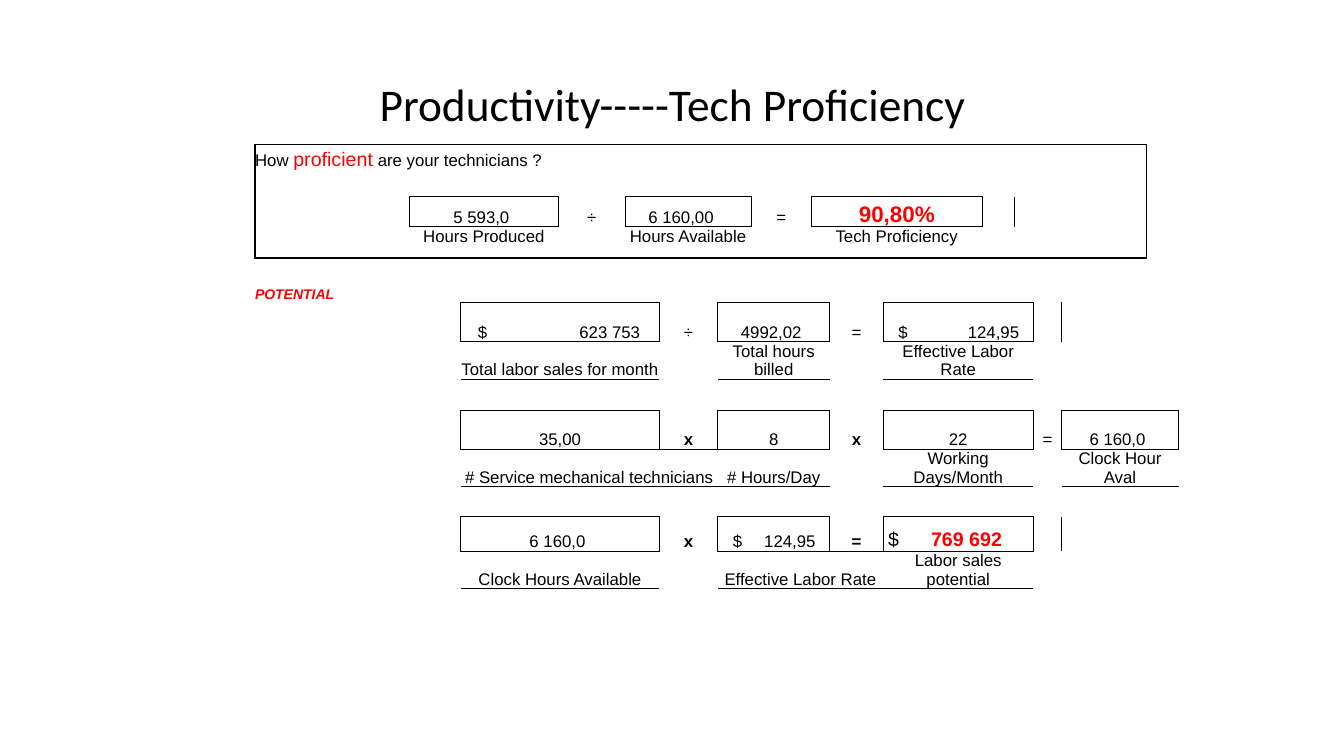
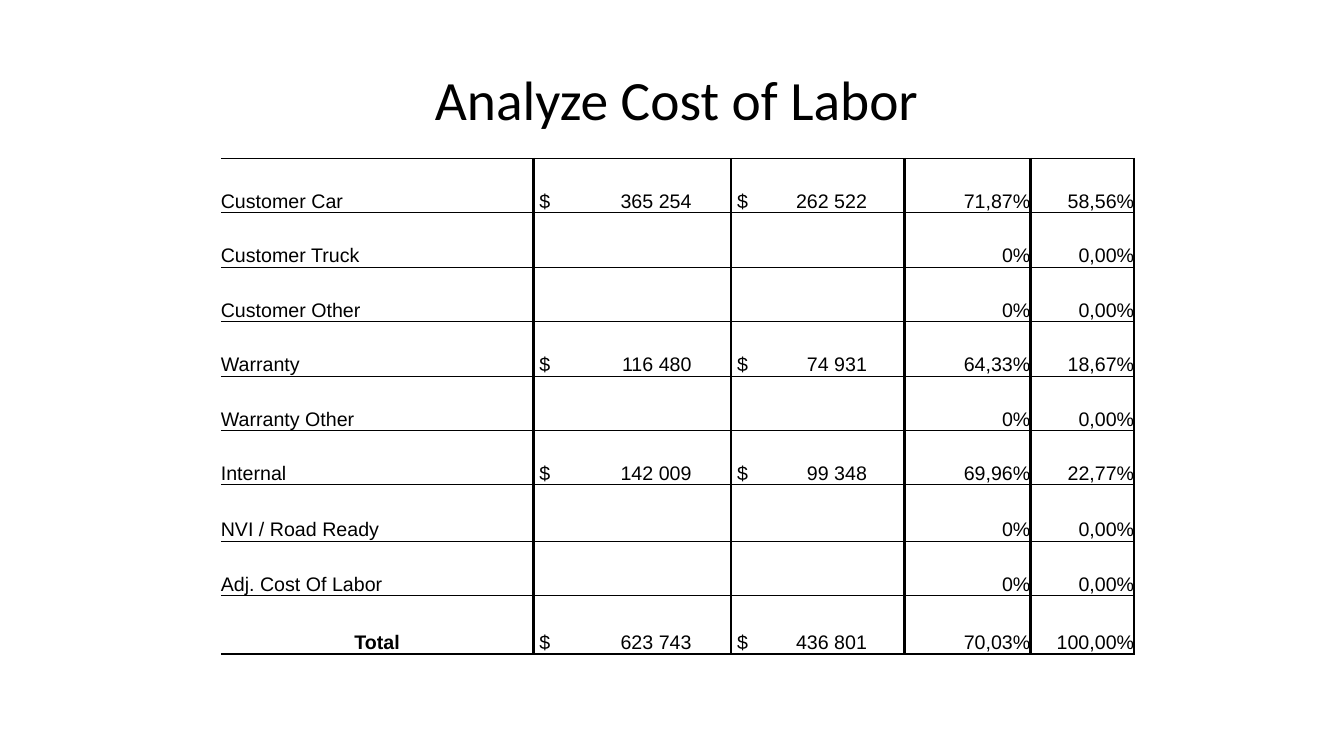
from dataclasses import dataclass

from lxml import etree
from pptx import Presentation
from pptx.dml.color import RGBColor
from pptx.enum.text import MSO_ANCHOR, PP_ALIGN
from pptx.oxml.ns import qn
from pptx.util import Inches, Pt

LEFT, CENTER, RIGHT = PP_ALIGN.LEFT, PP_ALIGN.CENTER, PP_ALIGN.RIGHT
TOP, MIDDLE, BOTTOM = MSO_ANCHOR.TOP, MSO_ANCHOR.MIDDLE, MSO_ANCHOR.BOTTOM

BLACK = RGBColor(0x00, 0x00, 0x00)
RED = RGBColor(0xFF, 0x00, 0x00)
WHITE = RGBColor(0xFF, 0xFF, 0xFF)

TITLE_FONT, TABLE_FONT = "Calibri", "Arial"
TITLE_ONLY = 5
NO_TABLE_STYLE = "{2D5ABB26-0587-4C30-8999-92F81FD0307C}"
SIDES = ("lnL", "lnR", "lnT", "lnB")
NEIGHBOURS = {"lnL": (0, -1, "lnR"), "lnR": (0, 1, "lnL"),
              "lnT": (-1, 0, "lnB"), "lnB": (1, 0, "lnT")}

COST_ROWS = [
    ("Customer Car", "365 254", "262 522", "71,87%", "58,56%"),
    ("Customer Truck", "", "", "0%", "0,00%"),
    ("Customer Other", "", "", "0%", "0,00%"),
    ("Warranty", "116 480", "74 931", "64,33%", "18,67%"),
    ("Warranty Other", "", "", "0%", "0,00%"),
    ("Internal", "142 009", "99 348", "69,96%", "22,77%"),
    ("NVI / Road Ready", "", "", "0%", "0,00%"),
    ("Adj. Cost Of Labor", "", "", "0%", "0,00%"),
    ("Total", "623 743", "436 801", "70,03%", "100,00%"),
]


@dataclass
class Value:
    """Cell text; with a tab it is an amount with its dollar sign set apart."""
    text: str
    size: float = 12
    color: RGBColor = BLACK
    bold: bool = False
    italic: bool = False
    align: PP_ALIGN = CENTER
    left: float = 0
    right: float = 0
    tab: float = 0


def style(font, size, color=BLACK, bold=False, italic=False, name=TABLE_FONT):
    font.name, font.size = name, Pt(size)
    font.bold, font.italic = bold, italic
    font.color.rgb = color


def add_titled_slide(prs, title, size, left, top):
    slide = prs.slides.add_slide(prs.slide_layouts[TITLE_ONLY])
    sp = slide.shapes.title
    sp.left, sp.top = Inches(left), Inches(top)
    sp.width, sp.height = Inches(11.5), Inches(0.8)
    tf = sp.text_frame
    tf.text = title
    tf.vertical_anchor = MIDDLE
    p = tf.paragraphs[0]
    p.alignment, p.line_spacing = CENTER, 0.9
    style(p.font, size, name=TITLE_FONT)
    return slide


def add_plain_table(slide, left, top, widths, heights):
    """Add a white table without borders or cell margins."""
    frame = slide.shapes.add_table(
        len(heights), len(widths), Inches(left), Inches(top),
        Inches(sum(widths)), Inches(sum(heights)))
    table = frame.table
    table.first_row = table.horz_banding = False
    table._tbl.tblPr.find(qn("a:tableStyleId")).text = NO_TABLE_STYLE
    for column, width in zip(table.columns, widths):
        column.width = Inches(width)
    for row, height in zip(table.rows, heights):
        row.height = Inches(height)
    for cell in table.iter_cells():
        cell.margin_left = cell.margin_right = 0
        cell.margin_top = cell.margin_bottom = 0
        cell.fill.solid()
        cell.fill.fore_color.rgb = WHITE
        p = cell.text_frame.paragraphs[0]
        etree.SubElement(p._p, qn("a:endParaRPr"), sz="1000")
    return table


def set_line(cell, side, width):
    tcPr = cell._tc.get_or_add_tcPr()
    old = tcPr.find(qn(f"a:{side}"))
    if old is not None:
        tcPr.remove(old)
    ln = etree.Element(qn(f"a:{side}"), w=str(Pt(width)))
    fill = etree.SubElement(ln, qn("a:solidFill"))
    etree.SubElement(fill, qn("a:srgbClr"), val=str(BLACK))
    before = [qn(f"a:{name}") for name in SIDES[:SIDES.index(side)]]
    tcPr.insert(sum(child.tag in before for child in tcPr), ln)


def draw_edge(table, row, col, side, width):
    """Draw one side of a cell, on the cell and on its neighbour."""
    set_line(table.cell(row, col), side, width)
    d_row, d_col, opposite = NEIGHBOURS[side]
    row, col = row + d_row, col + d_col
    if 0 <= row < len(table.rows) and 0 <= col < len(table.columns):
        set_line(table.cell(row, col), opposite, width)


def draw_frame(table, width):
    last_row, last_col = len(table.rows) - 1, len(table.columns) - 1
    for row in range(last_row + 1):
        draw_edge(table, row, 0, "lnL", width)
        draw_edge(table, row, last_col, "lnR", width)
    for col in range(last_col + 1):
        draw_edge(table, 0, col, "lnT", width)
        draw_edge(table, last_row, col, "lnB", width)


def add_run(p, text, **look):
    r = p.add_run()
    r.text = text
    if look:
        style(r.font, **look)


def write(cell, value, anchor=BOTTOM):
    cell.vertical_anchor = anchor
    cell.margin_left, cell.margin_right = Inches(value.left), Inches(value.right)
    p = cell.text_frame.paragraphs[0]
    p.alignment = LEFT if value.tab else value.align
    if value.tab:
        tabs = etree.SubElement(p._p.get_or_add_pPr(), qn("a:tabLst"))
        etree.SubElement(tabs, qn("a:tab"), pos=str(Inches(value.tab)), algn="r")
        style(p.font, value.size)
        add_run(p, "$\t")
        add_run(p, value.text, size=value.size, color=value.color, bold=value.bold)
    else:
        style(p.font, value.size, value.color, value.bold, value.italic)
        add_run(p, value.text)


def add_formula(table, row, terms, operators, label_anchor=BOTTOM):
    """Put boxed values in every other column, labels below, operators between."""
    for i, (value, label) in enumerate(terms):
        col = 1 + 2 * i
        write(table.cell(row, col), value)
        write(table.cell(row + 1, col), Value(label), label_anchor)
        for side in SIDES:
            draw_edge(table, row, col, side, 0.5)
    for i, operator in enumerate(operators):
        write(table.cell(row, 2 + 2 * i), operator)


def add_proficiency_table(slide):
    table = add_plain_table(slide, 2.53, 1.43,
                            [1.53, 1.48, 0.66, 1.25, 0.6, 1.69, 0.32, 1.31],
                            [0.26, 0.26, 0.3, 0.31])
    question = table.cell(0, 0)
    question.merge(table.cell(0, 1))
    question.vertical_anchor = BOTTOM
    p = question.text_frame.paragraphs[0]
    style(p.font, 12)
    add_run(p, "How ")
    add_run(p, "proficient", size=14, color=RED)
    add_run(p, " are your technicians ?")
    draw_frame(table, 1)
    add_formula(table, 2, [
        (Value("5 593,0", right=0.05), "Hours Produced"),
        (Value("6 160,00", right=0.14), "Hours Available"),
        (Value("90,80%", 16, RED, True), "Tech Proficiency"),
    ], [Value("÷"), Value("=")], TOP)


def add_potential_table(slide):
    table = add_plain_table(
        slide, 2.53, 2.67,
        [2.04, 1.97, 0.58, 1.11, 0.53, 1.49, 0.28, 1.16],
        [0.33, 0.39, 0.37, 0.31, 0.38, 0.37, 0.3, 0.34, 0.37, 0.31])
    table.cell(5, 1).merge(table.cell(5, 2))
    table.cell(8, 3).merge(table.cell(8, 4))
    write(table.cell(0, 0), Value("POTENTIAL", 10, RED, True, True, LEFT))
    times = Value("x", bold=True)
    add_formula(table, 1, [
        (Value("623 753", left=0.17, tab=1.61), "Total labor sales for month"),
        (Value("4992,02", right=0.05), "Total hours billed"),
        (Value("124,95", left=0.15, tab=1.2), "Effective Labor Rate"),
    ], [Value("÷"), Value("=")])
    add_formula(table, 4, [
        (Value("35,00"), "# Service mechanical technicians"),
        (Value("8"), "# Hours/Day"),
        (Value("22"), "Working Days/Month"),
        (Value("6 160,0", right=0.05), "Clock Hour Aval"),
    ], [times, times, Value("=")])
    add_formula(table, 7, [
        (Value("6 160,0", right=0.05), "Clock Hours Available"),
        (Value("124,95", left=0.15, tab=0.82), "Effective Labor Rate"),
        (Value("769 692", 14, RED, True, left=0.05, tab=1.13),
         "Labor sales potential"),
    ], [times, Value("=", bold=True)])


def add_cost_table(slide):
    table = add_plain_table(slide, 2.19, 1.57, [3.1, 1.96, 1.72, 1.25, 1.03],
                            [0.54] * 6 + [0.56, 0.54, 0.58])
    for row, (name, sales, cost, margin, share) in enumerate(COST_ROWS):
        total = name == "Total"
        values = [
            Value(name, 14, bold=total, align=CENTER if total else LEFT),
            Value(sales, 14, left=0.06, tab=1.51),
            Value(cost, 14, left=0.06, tab=1.29),
            Value(margin, 14, align=RIGHT),
            Value(share, 14, align=RIGHT),
        ]
        for col, value in enumerate(values):
            if value.text:
                write(table.cell(row, col), value)
            draw_edge(table, row, col, "lnT", 0.5)
            draw_edge(table, row, col, "lnR", 2)
            draw_edge(table, row, col, "lnB", 1 if total else 0.5)


def main():
    prs = Presentation()
    prs.slide_width, prs.slide_height = Inches(13.33), Inches(7.5)

    slide = add_titled_slide(prs, "Productivity-----Tech Proficiency", 32.4, 0.92, 0.66)
    add_proficiency_table(slide)
    add_potential_table(slide)

    slide = add_titled_slide(prs, "Analyze Cost of Labor", 39.6, 0.96, 0.62)
    add_cost_table(slide)

    prs.save("out.pptx")


if __name__ == "__main__":
    main()
